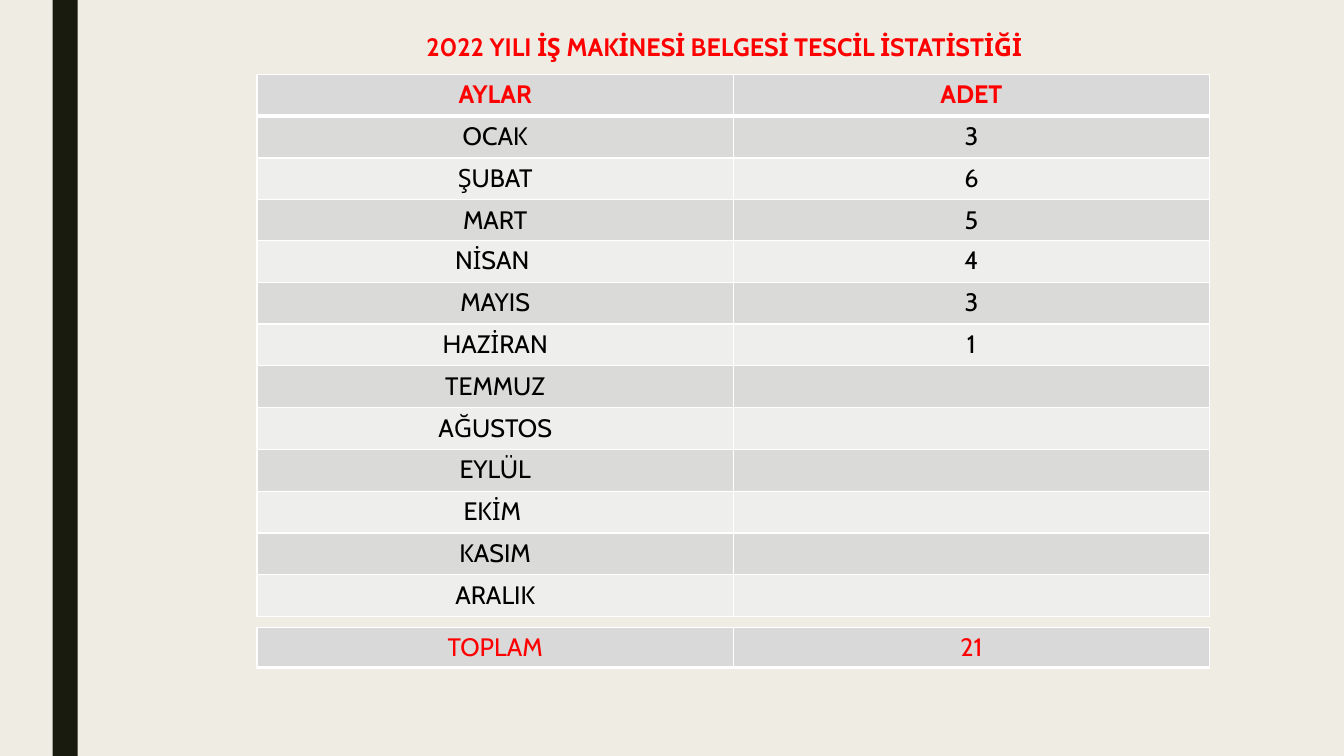
from lxml.etree import SubElement as Sub
from pptx import Presentation
from pptx.dml.color import RGBColor
from pptx.enum.shapes import MSO_SHAPE as Shape
from pptx.enum.text import MSO_ANCHOR as Anchor, PP_ALIGN as Align
from pptx.oxml.ns import qn
from pptx.util import Pt

RED, BLACK, WHITE = "FF0000", "000000", "FFFFFF"
HEAD, BANDS = "D9D9D9", ("DADBD9", "EEEEED")
LEFT, WIDTH = 183.6, 680.4
MONTHS = [
    ("OCAK", "3"), ("ŞUBAT", "6"), ("MART", "5"), ("NİSAN ", "4"),
    ("MAYIS", "3"), ("HAZİRAN", "1"), ("TEMMUZ", ""), ("AĞUSTOS", ""),
    ("EYLÜL", ""), ("EKİM ", ""), ("KASIM", ""), ("ARALIK", ""),
]


def paint(fill, color):
    fill.solid()
    fill.fore_color.rgb = RGBColor.from_string(color)


class Deck:
    """Hold the text style and the current slide, and draw its elements."""

    def __init__(self, back, font="Cabin", size=18):
        self.font, self.size = font, size
        self.prs = Presentation()
        self.prs.slide_width, self.prs.slide_height = Pt(960), Pt(540)
        self.slide = self.prs.slides.add_slide(self.prs.slide_layouts[6])
        paint(self.slide.background.fill, back)

    def label(self, para, text, color, bold=False):
        para.alignment = Align.CENTER
        para.font.size = Pt(self.size)
        if text:
            run = para.add_run()
            run.text = text
            run.font.name, run.font.size = self.font, Pt(self.size)
            run.font.bold = bold
            run.font.color.rgb = RGBColor.from_string(color)

    def bar(self, x, y, w, h, color):
        box = self.slide.shapes.add_shape(Shape.RECTANGLE, Pt(x), Pt(y), Pt(w), Pt(h))
        box.shadow.inherit = False
        paint(box.fill, color)
        box.line.fill.background()

    def title(self, x, y, w, h, text, color):
        box = self.slide.shapes.add_textbox(Pt(x), Pt(y), Pt(w), Pt(h))
        frame = box.text_frame
        frame.word_wrap = True
        frame.vertical_anchor = Anchor.MIDDLE
        para = frame.paragraphs[0]
        para.line_spacing = 0.89
        self.label(para, text, color, True)

    def edge(self, cell, low):
        props = cell._tc.get_or_add_tcPr()
        for side, width in zip("LRTB", (1, 1, 1, low)):
            line = Sub(props, qn(f"a:ln{side}"), w=str(Pt(width)))
            fill = Sub(line, qn("a:solidFill"))
            Sub(fill, qn("a:srgbClr"), val=WHITE)

    def table(self, x, y, w, high, rows):
        shape = self.slide.shapes.add_table(
            len(rows), 2, Pt(x), Pt(y), Pt(w), Pt(sum(high)))
        grid = shape.table
        grid.first_row = grid.horz_banding = False
        for col in grid.columns:
            col.width = Pt(w / 2)
        for i, (texts, fill, color, bold, low) in enumerate(rows):
            grid.rows[i].height = Pt(high[i])
            for j, text in enumerate(texts):
                cell = grid.cell(i, j)
                self.edge(cell, low)
                paint(cell.fill, fill)
                self.label(cell.text_frame.paragraphs[0], text, color, bold)

    def save(self):
        self.prs.save("out.pptx")


def main():
    deck = Deck("EFEDE3")
    deck.bar(37.5, 0, 18, 540, "191B0E")
    deck.title(271.4, 22.3, 491.8, 25.2,
               "2022 YILI İŞ MAKİNESİ BELGESİ TESCİL İSTATİSTİĞİ", RED)
    rows = [(("AYLAR", "ADET"), HEAD, RED, True, 3)]
    rows += [(pair, BANDS[i % 2], BLACK, False, 1) for i, pair in enumerate(MONTHS)]
    high = [29 if texts[0] == "MART" else 29.85 for texts, *_ in rows]
    deck.table(LEFT, 53.2, WIDTH, high, rows)
    deck.table(LEFT, 448, WIDTH, [28.8], [(("TOPLAM", "21"), HEAD, RED, False, 3)])
    deck.save()


if __name__ == "__main__":
    main()
